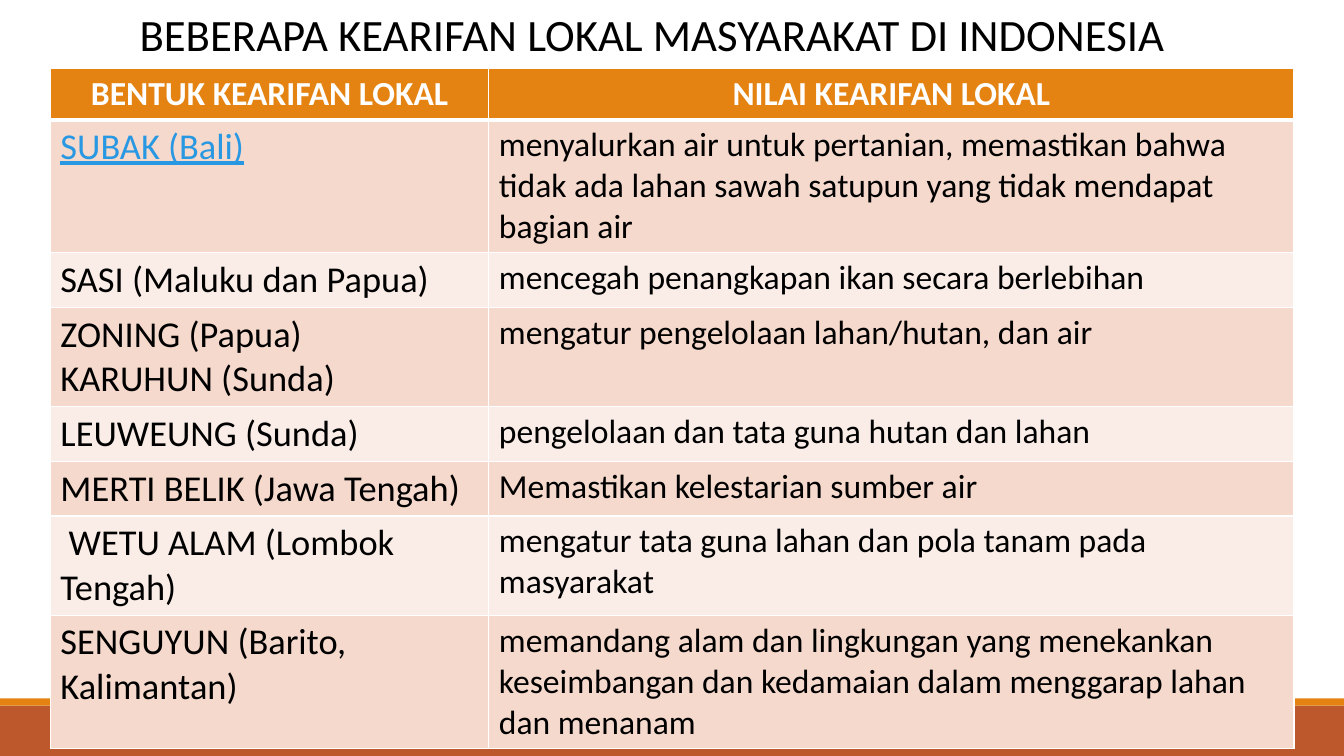
import pptx
import pptx.dml.color
import pptx.enum.shapes
import pptx.enum.text
import pptx.oxml
import pptx.util
from dataclasses import dataclass

Cm = pptx.util.Cm
ALIGN = pptx.enum.text.PP_ALIGN


@dataclass(frozen=True)
class Theme:
    font: str = "Calibri"
    orange: str = "E48312"
    rust: str = "BD582C"
    dark_band: str = "F5D9CC"
    light_band: str = "FAEDE7"
    link: str = "2998E3"
    black: str = "000000"
    white: str = "FFFFFF"
    title_size: int = 32
    name_size: int = 26
    value_size: int = 24


THEME = Theme()

TITLE = "BEBERAPA KEARIFAN LOKAL MASYARAKAT DI INDONESIA"
HEADINGS = ("BENTUK KEARIFAN LOKAL", "NILAI KEARIFAN LOKAL")
HEADING_HEIGHT = 1.27
COLUMN_WIDTHS = (11.05, 20.29)

# Local wisdom, its value, row height in cm
WISDOMS = [
    ("SUBAK (Bali)",
     "menyalurkan air untuk pertanian, memastikan bahwa tidak ada lahan sawah "
     "satupun yang tidak mendapat bagian air", 3.3),
    ("SASI (Maluku dan Papua)",
     "mencegah penangkapan ikan secara berlebihan", 1.36),
    ("ZONING (Papua)\nKARUHUN (Sunda)",
     "mengatur pengelolaan lahan/hutan, dan air", 2.45),
    ("LEUWEUNG (Sunda)",
     "pengelolaan dan tata guna hutan dan lahan", 1.36),
    ("MERTI BELIK (Jawa Tengah)",
     "Memastikan kelestarian sumber air", 1.36),
    (" WETU ALAM (Lombok Tengah)",
     "mengatur tata guna lahan dan pola tanam pada masyarakat", 2.45),
    ("SENGUYUN (Barito, Kalimantan)",
     "memandang alam dan lingkungan yang menekankan keseimbangan dan kedamaian "
     "dalam menggarap lahan dan menanam", 3.3),
]


def rgb(colour):
    return pptx.dml.color.RGBColor.from_string(colour)


def write(frame, text, size, colour, align=ALIGN.LEFT, bold=False, underline=False):
    frame.text = text
    for para in frame.paragraphs:
        para.alignment = align
        for span in para.runs:
            span.font.name = THEME.font
            span.font.size = pptx.util.Pt(size)
            span.font.bold = bold
            span.font.underline = underline
            span.font.color.rgb = rgb(colour)


def add_bar(page, top, height, colour):
    bar = page.shapes.add_shape(pptx.enum.shapes.MSO_SHAPE.RECTANGLE,
                                0, Cm(top), Cm(33.87), Cm(height))
    bar.shadow.inherit = False
    bar.fill.solid()
    bar.fill.fore_color.rgb = rgb(colour)
    bar.line.fill.background()


def add_title(page):
    title = page.shapes.title
    title.left, title.top, title.width, title.height = Cm(2.08), Cm(0.05), Cm(28.73), Cm(1.63)
    frame = title.text_frame
    frame.word_wrap = True
    frame.auto_size = pptx.enum.text.MSO_AUTO_SIZE.NONE
    frame.vertical_anchor = pptx.enum.text.MSO_ANCHOR.TOP
    write(frame, TITLE, THEME.title_size, THEME.black, ALIGN.CENTER)


def style_cell(cell, colour, bottom=1):
    # Borders come before the fill in the cell properties
    properties = cell._tc.get_or_add_tcPr()
    for side, points in (("L", 1), ("R", 1), ("T", 1), ("B", bottom)):
        properties.append(pptx.oxml.parse_xml(
            f'<a:ln{side} xmlns:a="http://schemas.openxmlformats.org/drawingml/2006/main" '
            f'w="{pptx.util.Pt(points)}"><a:solidFill><a:srgbClr val="{THEME.white}"/>'
            f'</a:solidFill></a:ln{side}>'))
    cell.fill.solid()
    cell.fill.fore_color.rgb = rgb(colour)


def add_wisdom_table(page):
    heights = [HEADING_HEIGHT] + [height for _, _, height in WISDOMS]
    table = page.shapes.add_table(len(heights), len(COLUMN_WIDTHS), Cm(1.27), Cm(1.73),
                                  Cm(sum(COLUMN_WIDTHS)), Cm(sum(heights))).table
    table.horz_banding = False
    for column, width in zip(table.columns, COLUMN_WIDTHS):
        column.width = Cm(width)
    for row, height in zip(table.rows, heights):
        row.height = Cm(height)

    # Heading row
    for cell, heading in zip(table.rows[0].cells, HEADINGS):
        style_cell(cell, THEME.orange, bottom=3)
        write(cell.text_frame, heading, THEME.value_size, THEME.white, ALIGN.CENTER, bold=True)

    # Banded rows; the first name looks like a link
    for index, (name, value, _) in enumerate(WISDOMS):
        name_cell, value_cell = table.rows[index + 1].cells
        for cell in (name_cell, value_cell):
            style_cell(cell, THEME.light_band if index % 2 else THEME.dark_band)
        linked = index == 0
        write(name_cell.text_frame, name, THEME.name_size,
              THEME.link if linked else THEME.black, underline=linked)
        write(value_cell.text_frame, value, THEME.value_size, THEME.black)


def main():
    deck = pptx.Presentation()
    deck.slide_width, deck.slide_height = Cm(33.87), Cm(19.05)
    page = deck.slides.add_slide(deck.slide_layouts.get_by_name("Title Only"))

    # Footer bars
    add_bar(page, 17.78, 1.27, THEME.rust)
    add_bar(page, 17.6, 0.18, THEME.orange)

    # Content
    add_title(page)
    add_wisdom_table(page)
    deck.save("out.pptx")


if __name__ == "__main__":
    main()
